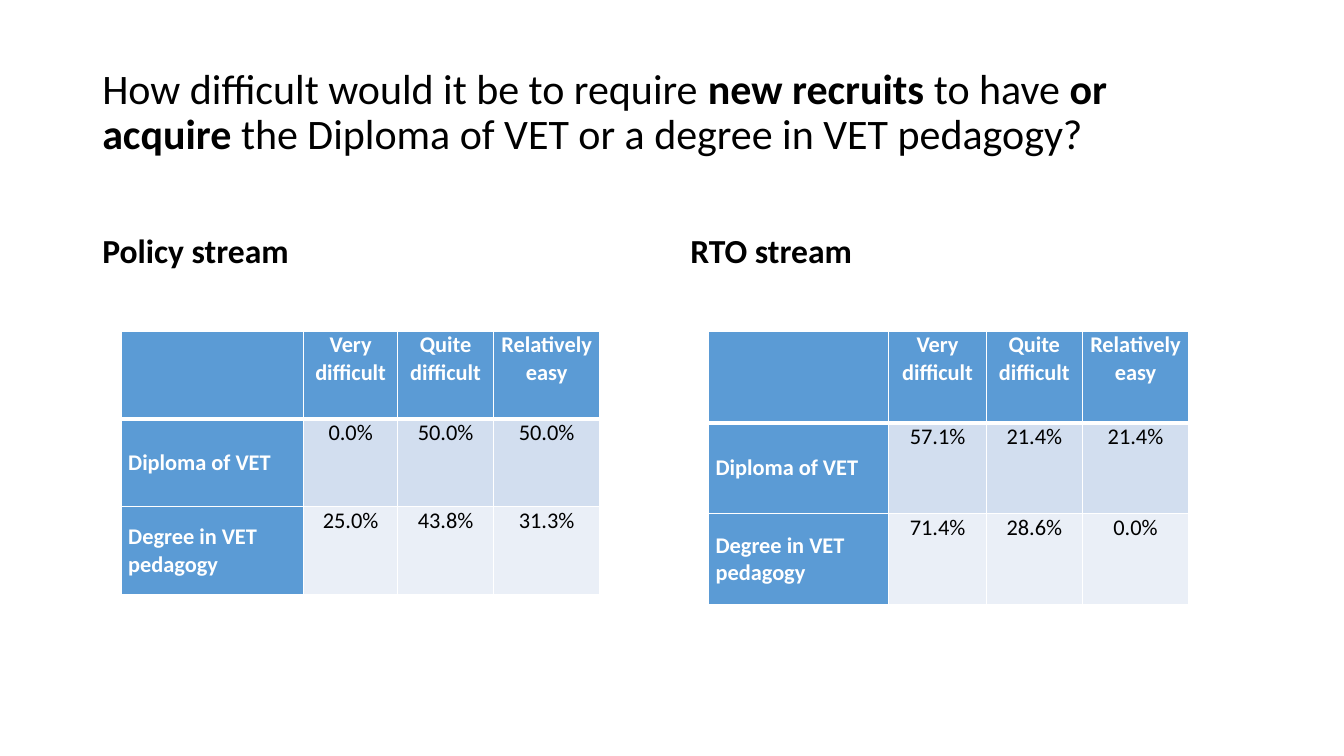
from lxml.etree import SubElement
from pptx import Presentation
from pptx.dml.color import RGBColor
from pptx.enum.text import MSO_ANCHOR, PP_ALIGN
from pptx.oxml.ns import qn
from pptx.util import Pt

THEME = {
    "font": "Calibri",
    "text": "000000",
    "white": "FFFFFF",
    "header": "5B9BD5",
    "bands": ["D2DEEF", "EAEFF7"],
    "title_size": 30,
    "label_size": 24,
    "cell_size": 16,
}


def add_run(paragraph, text, size, color, bold):
    run = paragraph.add_run()
    run.text = text
    formats = {"name": THEME["font"], "size": Pt(size), "bold": bold}
    for name, value in formats.items():
        setattr(run.font, name, value)
    run.font.color.rgb = RGBColor.from_string(color)


def add_text(slide, box, anchor, size, parts):
    shape = slide.shapes.add_textbox(*[Pt(length) for length in box])
    shape.text_frame.word_wrap = True
    shape.text_frame.vertical_anchor = anchor
    paragraph = shape.text_frame.paragraphs[0]
    paragraph.line_spacing = 0.9
    for text, bold in parts:
        add_run(paragraph, text, size, THEME["text"], bold)


presentation = Presentation()
presentation.slide_width = Pt(960)
presentation.slide_height = Pt(540)
slide = presentation.slides.add_slide(presentation.slide_layouts[6])

# Title
title_parts = [
    ("How difficult would it be to require ", False),
    ("new recruits", True),
    (" to have ", False),
    ("or acquire", True),
    (" the Diploma of VET or a degree in VET pedagogy?", False),
]
add_text(slide, (66, 28.8, 828, 104.4), MSO_ANCHOR.MIDDLE,
         THEME["title_size"], title_parts)

# Streams: label and results side by side
answers = ["", "Very difficult", "Quite difficult", "Relatively easy"]
streams = [
    {
        "name": "Policy stream", "label_left": 66, "table_left": 86.6,
        "columns": [130.3, 67.2, 68.4, 76], "row_height": 62.6,
        "results": [["Diploma of VET", "0.0%", "50.0%", "50.0%"],
                    ["Degree in VET pedagogy", "25.0%", "43.8%", "31.3%"]],
    },
    {
        "name": "RTO stream", "label_left": 486, "table_left": 506.2,
        "columns": [128.7, 69.6, 68.6, 76], "row_height": 65.1,
        "results": [["Diploma of VET", "57.1%", "21.4%", "21.4%"],
                    ["Degree in VET pedagogy", "71.4%", "28.6%", "0.0%"]],
    },
]
for stream in streams:
    add_text(slide, (stream["label_left"], 132.5, 407, 64.8), MSO_ANCHOR.BOTTOM,
             THEME["label_size"], [(stream["name"], True)])

    rows = [answers] + stream["results"]
    columns = stream["columns"]
    table = slide.shapes.add_table(
        len(rows), len(columns), Pt(stream["table_left"]), Pt(236.9),
        Pt(sum(columns)), Pt(stream["row_height"] * len(rows))).table
    table.first_col = True
    for column, width in zip(table.columns, columns):
        column.width = Pt(width)

    for row_index, texts in enumerate(rows):
        table.rows[row_index].height = Pt(stream["row_height"])
        for column_index, text in enumerate(texts):
            cell = table.cell(row_index, column_index)
            is_row_label = row_index > 0 and column_index == 0
            is_header = row_index == 0 or column_index == 0
            formats = {
                "margin_left": Pt(5), "margin_right": Pt(5),
                "margin_top": 0, "margin_bottom": 0,
                "vertical_anchor": MSO_ANCHOR.MIDDLE if is_row_label else MSO_ANCHOR.TOP,
            }
            for name, value in formats.items():
                setattr(cell, name, value)

            # White borders, thicker between header and results
            properties = cell._tc.get_or_add_tcPr()
            thick_side = {0: "lnB", 1: "lnT"}.get(row_index)
            for side in ("lnL", "lnR", "lnT", "lnB"):
                width = 3 if side == thick_side else 1
                line = SubElement(properties, qn(f"a:{side}"), w=str(Pt(width)))
                fill = SubElement(line, qn("a:solidFill"))
                SubElement(fill, qn("a:srgbClr"), val=THEME["white"])

            # Fill and text
            color = THEME["header"] if is_header else THEME["bands"][row_index - 1]
            cell.fill.solid()
            cell.fill.fore_color.rgb = RGBColor.from_string(color)
            if text:
                paragraph = cell.text_frame.paragraphs[0]
                paragraph.alignment = PP_ALIGN.LEFT if is_row_label else PP_ALIGN.CENTER
                add_run(paragraph, text, THEME["cell_size"],
                        THEME["white"] if is_header else THEME["text"], is_header)

presentation.save("out.pptx")
